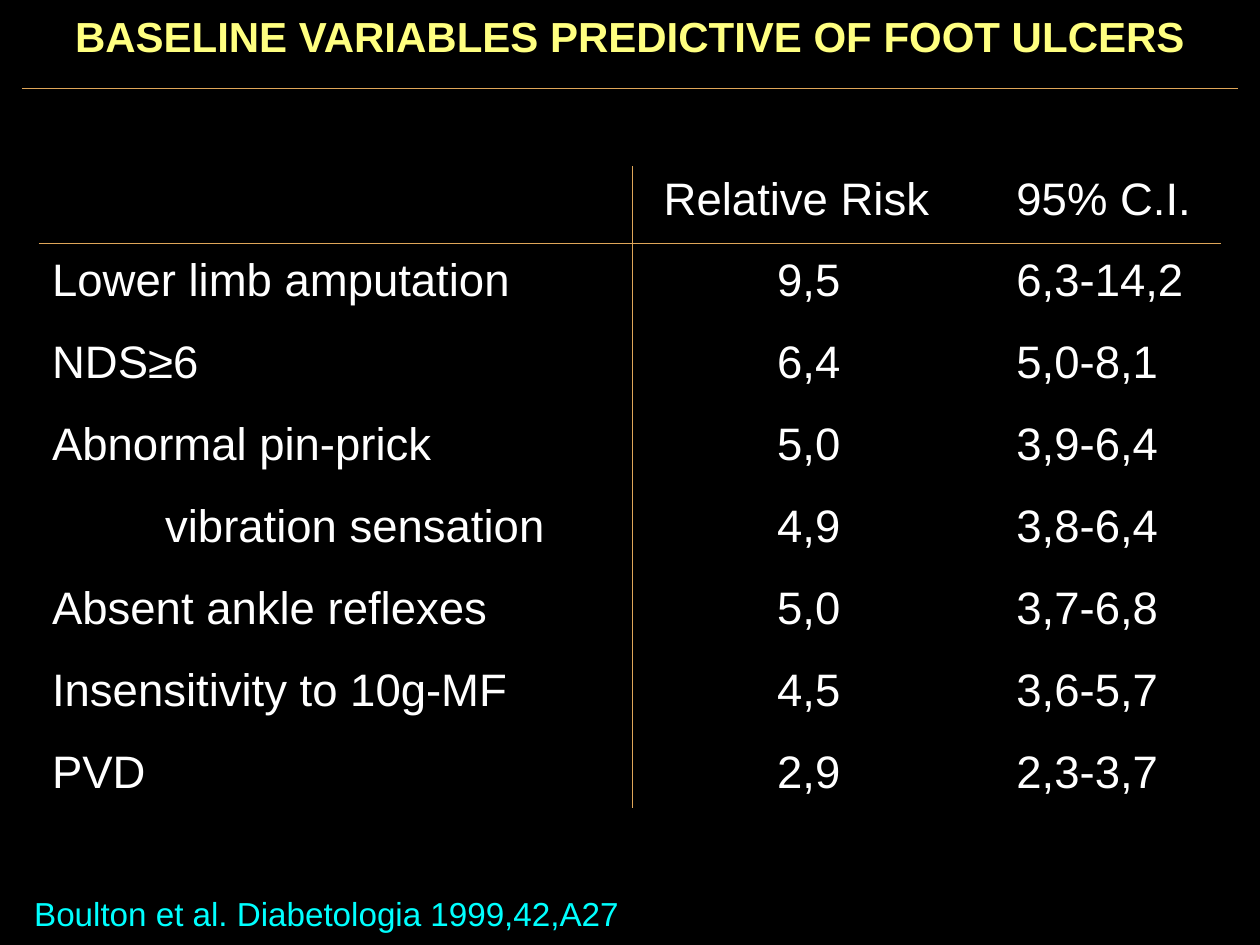
"""Build the slide on baseline variables predictive of foot ulcers."""
from dataclasses import dataclass

from lxml.etree import SubElement
from pptx import Presentation
from pptx.dml.color import RGBColor
from pptx.enum.shapes import MSO_CONNECTOR
from pptx.enum.text import MSO_ANCHOR, PP_ALIGN
from pptx.oxml.ns import qn
from pptx.util import Cm, Pt


@dataclass(frozen=True)
class Theme:
    font: str = "Arial"
    background: str = "000000"
    title: str = "FFFF80"
    body: str = "FFFFFF"
    citation: str = "00FFFF"
    rule: str = "DFA659"
    title_size: int = 24
    body_size: int = 26
    citation_size: int = 19
    rule_width: float = 0.5


THEME = Theme()
TITLE = "BASELINE VARIABLES PREDICTIVE OF FOOT ULCERS"
CITATION = "Boulton et al. Diabetologia 1999,42,A27"
ROWS = [
    ("", "Relative Risk", "95% C.I."),
    ("Lower limb amputation", "9,5", "6,3-14,2"),
    ("NDS≥6", "6,4", "5,0-8,1"),
    ("Abnormal pin-prick", "5,0", "3,9-6,4"),
    ("vibration sensation", "4,9", "3,8-6,4"),
    ("Absent ankle reflexes", "5,0", "3,7-6,8"),
    ("Insensitivity to 10g-MF", "4,5", "3,6-5,7"),
    ("PVD", "2,9", "2,3-3,7"),
]
CONTINUED_LABEL = "vibration sensation"

SLIDE_WIDTH, SLIDE_HEIGHT = 25.4, 19.05
MARGIN = 0.44
CONTENT_WIDTH = SLIDE_WIDTH - 2 * MARGIN
TABLE_LEFT, TABLE_TOP, ROW_HEIGHT = 0.78, 3.25, 1.65
COLUMN_WIDTHS = (11.97, 7.11, 4.75)
COLUMN_INSETS = (0.27, 0.63, 0.63)
CONTINUED_INDENT = 2.28
DIVIDER_X = TABLE_LEFT + COLUMN_WIDTHS[0]
HEADER_RULE_Y = TABLE_TOP + ROW_HEIGHT
RULES = [
    (MARGIN, 1.78, SLIDE_WIDTH - MARGIN, 1.78),
    (DIVIDER_X, 3.35, DIVIDER_X, 16.29),
    (TABLE_LEFT, HEADER_RULE_Y, TABLE_LEFT + sum(COLUMN_WIDTHS), HEADER_RULE_Y),
]


def style_paragraph(paragraph, size, color, bold=False):
    for run in paragraph.runs:
        run.font.name = THEME.font
        run.font.size = Pt(size)
        run.font.bold = bold
        run.font.color.rgb = RGBColor.from_string(color)


def clear_borders(cell):
    properties = cell._tc.get_or_add_tcPr()
    for side in ("L", "R", "T", "B"):
        SubElement(SubElement(properties, qn(f"a:ln{side}")), qn("a:noFill"))


def format_cell(cell, text, row, column):
    clear_borders(cell)
    cell.fill.background()
    cell.vertical_anchor = MSO_ANCHOR.MIDDLE
    cell.margin_top = cell.margin_bottom = cell.margin_right = 0
    is_value = column == 1 and row > 0
    indent = CONTINUED_INDENT if text == CONTINUED_LABEL else 0
    cell.margin_left = Cm(0 if is_value else COLUMN_INSETS[column] + indent)
    cell.text_frame.text = text
    paragraph = cell.text_frame.paragraphs[0]
    paragraph.alignment = PP_ALIGN.CENTER if is_value else PP_ALIGN.LEFT
    paragraph.line_spacing = 0.85
    style_paragraph(paragraph, THEME.body_size, THEME.body)


def add_title(slide):
    title = slide.shapes.title
    title.left, title.top = Cm(MARGIN), Cm(0.2)
    title.width, title.height = Cm(CONTENT_WIDTH), Cm(1.57)
    title.text_frame.text = TITLE
    title.text_frame.word_wrap = True
    title.text_frame.vertical_anchor = MSO_ANCHOR.TOP
    paragraph = title.text_frame.paragraphs[0]
    paragraph.alignment = PP_ALIGN.CENTER
    paragraph.line_spacing = 0.9
    paragraph.space_before = Pt(0)
    style_paragraph(paragraph, THEME.title_size, THEME.title, bold=True)


def add_rules(slide):
    for ends in RULES:
        rule = slide.shapes.add_connector(MSO_CONNECTOR.STRAIGHT, *map(Cm, ends))
        rule.line.color.rgb = RGBColor.from_string(THEME.rule)
        rule.line.width = Pt(THEME.rule_width)
        SubElement(rule._element.spPr, qn("a:effectLst"))


def add_risk_table(slide):
    table = slide.shapes.add_table(
        len(ROWS), len(COLUMN_WIDTHS), Cm(TABLE_LEFT), Cm(TABLE_TOP),
        Cm(sum(COLUMN_WIDTHS)), Cm(ROW_HEIGHT * len(ROWS)),
    ).table
    table.first_row = table.horz_banding = False
    for column, width in zip(table.columns, COLUMN_WIDTHS):
        column.width = Cm(width)
    for row, texts in enumerate(ROWS):
        table.rows[row].height = Cm(ROW_HEIGHT)
        for column, text in enumerate(texts):
            format_cell(table.cell(row, column), text, row, column)


def add_citation(slide):
    box = slide.shapes.add_textbox(Cm(MARGIN), Cm(17.88), Cm(12.5), Cm(0.99))
    box.text_frame.word_wrap = True
    box.text_frame.text = CITATION
    style_paragraph(box.text_frame.paragraphs[0], THEME.citation_size, THEME.citation)


def main():
    presentation = Presentation()
    presentation.slide_width, presentation.slide_height = Cm(SLIDE_WIDTH), Cm(SLIDE_HEIGHT)
    slide = presentation.slides.add_slide(presentation.slide_layouts.get_by_name("Title Only"))
    slide.background.fill.solid()
    slide.background.fill.fore_color.rgb = RGBColor.from_string(THEME.background)
    add_title(slide)
    add_risk_table(slide)
    add_rules(slide)
    add_citation(slide)
    presentation.save("out.pptx")


if __name__ == "__main__":
    main()
